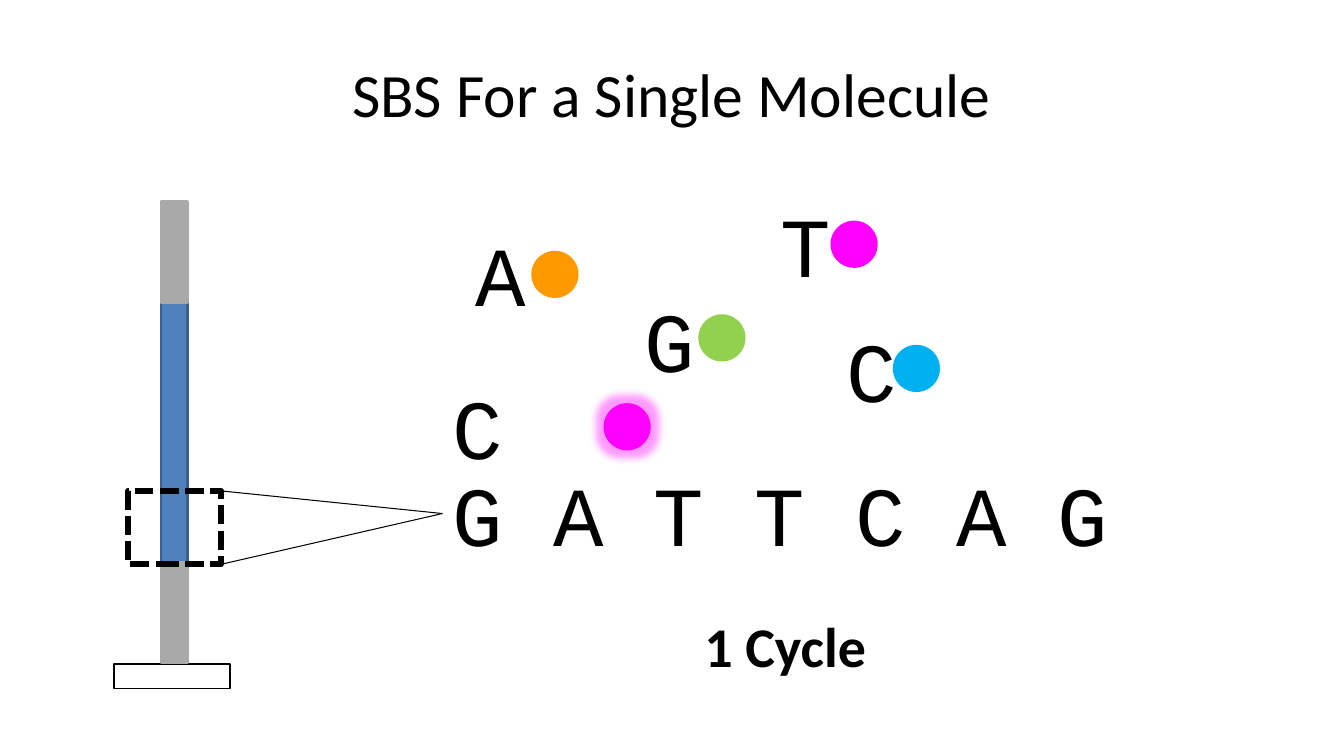
from lxml import etree
from pptx import Presentation
from pptx.dml.color import RGBColor
from pptx.enum import dml, shapes, text
from pptx.oxml import ns
from pptx.util import Cm, Pt

BLACK = RGBColor(0x00, 0x00, 0x00)
WHITE = RGBColor(0xFF, 0xFF, 0xFF)
GREY = RGBColor(0xA9, 0xA9, 0xA9)
BLUE = RGBColor(0x4F, 0x81, 0xBD)
DARK_BLUE = RGBColor(0x3A, 0x5F, 0x8C)
MAGENTA = RGBColor(0xFF, 0x00, 0xFF)
ORANGE = RGBColor(0xFF, 0x99, 0x00)
GREEN = RGBColor(0x92, 0xD0, 0x50)
SKY = RGBColor(0x00, 0xB0, 0xF0)

DYE_SIZE = 1.19
LETTER_WIDTH, LETTER_HEIGHT = 1.8, 2.82
STRAND_LEFT = 11.15

# Letter, letter position, dye position, dye colour
FREE_NUCLEOTIDES = [
    ("A", (11.73, 5.49), (13.39, 6.32), ORANGE),
    ("G", (16, 7.14), (17.6, 7.92), GREEN),
    ("T", (19.41, 4.75), (20.93, 5.56), MAGENTA),
    ("C", (21.08, 7.9), (22.5, 8.69), SKY),
]


def write_text(shape, content, font="Courier New", size=60, bold=False, align=None):
    paragraph = shape.text_frame.paragraphs[0]
    paragraph.text = content
    paragraph.alignment = align
    paragraph.font.name = font
    paragraph.font.size = Pt(size)
    paragraph.font.bold = bold
    paragraph.font.color.rgb = BLACK


def add_label(parent, content, left, top, width=LETTER_WIDTH, height=LETTER_HEIGHT, **style):
    label = parent.add_textbox(Cm(left), Cm(top), Cm(width), Cm(height))
    label.text_frame.word_wrap = False
    label.text_frame.auto_size = text.MSO_AUTO_SIZE.SHAPE_TO_FIT_TEXT
    write_text(label, content, **style)
    return label


def add_figure(parent, kind, left, top, width, height, fill=None, line=None, weight=1):
    shape = parent.add_shape(kind, Cm(left), Cm(top), Cm(width), Cm(height))
    shape.shadow.inherit = False
    if fill is None:
        shape.fill.background()
    else:
        shape.fill.solid()
        shape.fill.fore_color.rgb = fill
    if line is None:
        shape.line.fill.background()
    else:
        shape.line.color.rgb = line
        shape.line.width = Pt(weight)
    return shape


def add_rectangle(parent, *bounds, **style):
    return add_figure(parent, shapes.MSO_SHAPE.RECTANGLE, *bounds, **style)


def add_dye(parent, left, top, color):
    return add_figure(parent, shapes.MSO_SHAPE.OVAL, left, top, DYE_SIZE, DYE_SIZE, fill=color)


def add_glow(shape, color, radius, alpha):
    effects = shape._element.spPr.find(ns.qn("a:effectLst"))
    glow = etree.SubElement(effects, ns.qn("a:glow"), rad=str(int(Pt(radius))))
    value = etree.SubElement(glow, ns.qn("a:srgbClr"), val=str(color))
    etree.SubElement(value, ns.qn("a:alpha"), val=str(alpha * 1000))


def add_zoom_line(slide, left, top, target):
    line = slide.shapes.add_connector(
        shapes.MSO_CONNECTOR.STRAIGHT, Cm(left), Cm(top), target.left, target.top)
    line.end_connect(target, 1)
    line.line.color.rgb = BLACK
    line.line.width = Pt(0.75)
    etree.SubElement(line._element.spPr, ns.qn("a:effectLst"))


def add_nucleotide(slide, letter, letter_at, dye_at, color):
    group = slide.shapes.add_group_shape()
    add_label(group.shapes, letter, *letter_at)
    add_dye(group.shapes, *dye_at, color)


def add_molecule(slide):
    left, width, cap = 4.06, 0.66, 2.54
    top, insert_height = 5.08, 6.55
    insert_top = top + cap
    group = slide.shapes.add_group_shape()
    add_rectangle(group.shapes, left, insert_top, width, insert_height,
                  fill=BLUE, line=DARK_BLUE, weight=2)
    for cap_top in (insert_top + insert_height, top):
        add_rectangle(group.shapes, left, cap_top, width, cap, fill=GREY, line=GREY, weight=2)


def main():
    presentation = Presentation()
    presentation.slide_width, presentation.slide_height = Cm(33.87), Cm(19.05)
    slide = presentation.slides.add_slide(presentation.slide_layouts[5])

    # Title
    title = slide.shapes.title
    title.left, title.top, title.width, title.height = Cm(1.69), Cm(0.76), Cm(30.48), Cm(3.18)
    title.text_frame.vertical_anchor = text.MSO_ANCHOR.MIDDLE
    write_text(title, "SBS For a Single Molecule", font="Calibri", size=44,
               align=text.PP_ALIGN.CENTER)

    # Template strand, incorporated base and its released dye
    released_dye = add_dye(slide.shapes, 15.21, 10.16, MAGENTA)
    add_glow(released_dye, MAGENTA, radius=11, alpha=40)
    add_label(slide.shapes, "C", STRAND_LEFT, 9.35)
    strand = add_label(slide.shapes, "G A T T C A G", STRAND_LEFT, 11.53, width=17.2)

    # Molecule on its base, with the enlarged window
    window_left, window_top, window_width, window_height = 3.23, 12.37, 2.34, 1.85
    add_rectangle(slide.shapes, 2.87, 16.74, 2.92, 0.61, fill=WHITE, line=BLACK, weight=1.25)
    for corner_top in (window_top, window_top + window_height):
        add_zoom_line(slide, window_left + window_width, corner_top, strand)
    add_molecule(slide)
    window = add_rectangle(slide.shapes, window_left, window_top, window_width, window_height,
                           line=BLACK, weight=4.5)
    window.line.dash_style = dml.MSO_LINE.SQUARE_DOT

    # Free labelled nucleotides
    for nucleotide in FREE_NUCLEOTIDES:
        add_nucleotide(slide, *nucleotide)

    # Cycle count
    add_label(slide.shapes, "1 Cycle", 17.5, 15.29, width=4.62, height=1.96,
              font="Calibri", size=40, bold=True)

    presentation.save("out.pptx")


if __name__ == "__main__":
    main()
